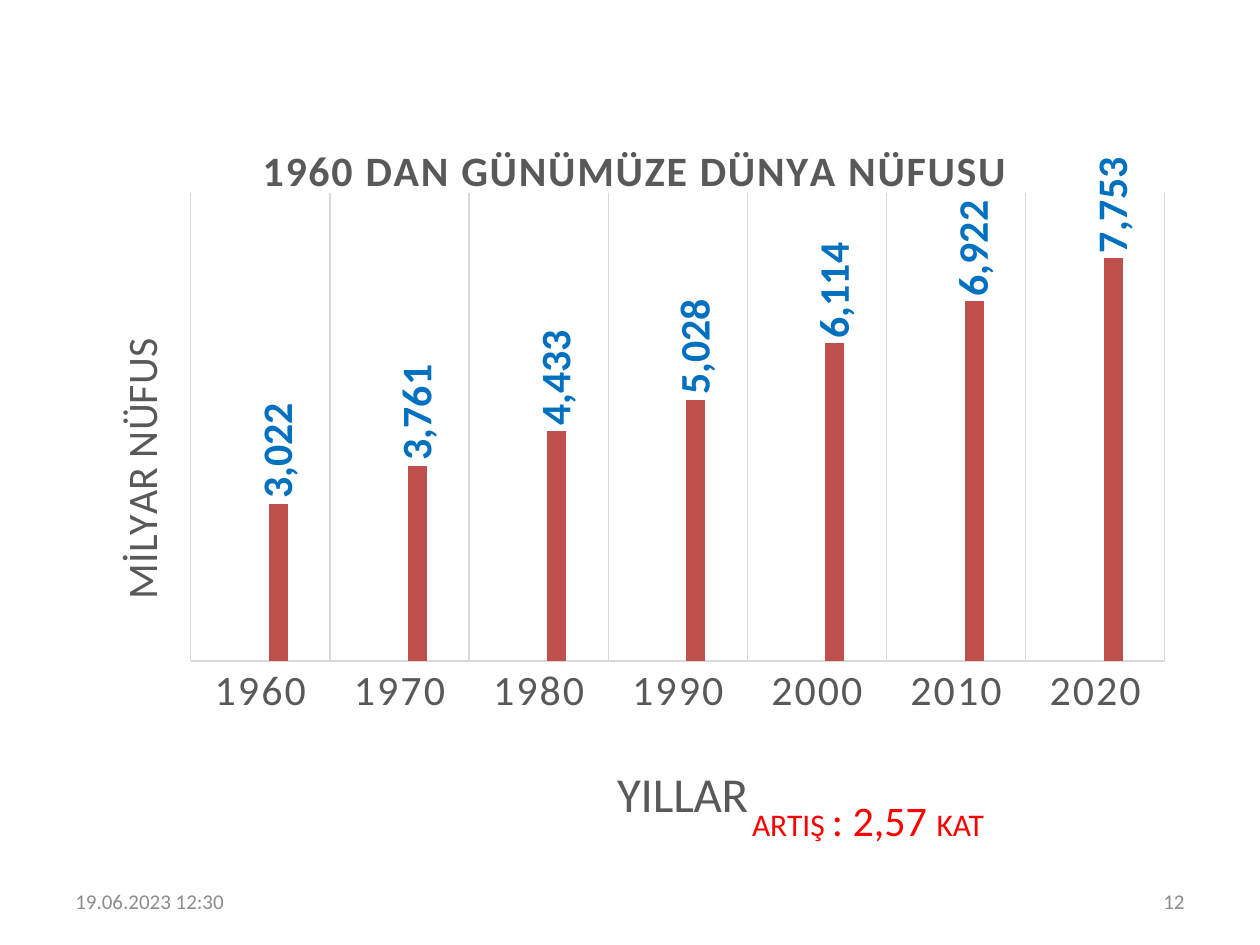
from lxml.etree import SubElement
from pptx import Presentation
from pptx.chart.data import CategoryChartData
from pptx.dml.color import RGBColor
from pptx.enum.chart import XL_CHART_TYPE, XL_LABEL_POSITION, XL_TICK_LABEL_POSITION, XL_TICK_MARK
from pptx.enum.text import MSO_ANCHOR, PP_ALIGN
from pptx.oxml.ns import qn
from pptx.util import Inches, Pt

# Content
YEARS = ["1960", "1970", "1980", "1990", "2000", "2010", "2020"]
SERIES = [
    ("Series 1", [None] * len(YEARS), "4F81BD"),
    ("Series 2", [3022, 3761, 4433, 5028, 6114, 6922, 7753], "C0504D"),
]
CHART_TITLE, X_TITLE, Y_TITLE = "1960 DAN GÜNÜMÜZE DÜNYA NÜFUSU", "YILLAR", "MİLYAR NÜFUS"
GROWTH = [("ARTIŞ ", 18), (": 2,57 ", 24), ("KAT", 18)]
DATE, NUMBER = [("19.06.2023 12:30", 12)], [("12", 12)]

FONT = "Calibri"
TEXT, GRID, LABEL, RED, FOOTER = "595959", "D9D9D9", "0070C0", "FF0000", "8C8C8C"
MARGIN, FOOT_TOP, FOOT_W, FOOT_H = 0.5, 6.95, 2.33, 0.4


def rgb(color):
    return RGBColor.from_string(color)


def style(font, size, color, bold=False):
    font.name, font.size, font.bold = FONT, Pt(size), bold
    font.color.rgb = rgb(color)


def place(parent, index, **shares):
    """Set a manual layout, in shares of the chart's size."""
    for old in parent.findall(qn("c:layout")):
        parent.remove(old)
    layout = SubElement(parent, qn("c:layout"))
    parent.insert(index, layout)
    manual = SubElement(layout, qn("c:manualLayout"))
    if "w" in shares:
        SubElement(manual, qn("c:layoutTarget")).set("val", "inner")
    for mode in ("xMode", "yMode"):
        SubElement(manual, qn(f"c:{mode}")).set("val", "edge")
    for key, share in shares.items():
        SubElement(manual, qn(f"c:{key}")).set("val", str(share))


def set_title(title, text, size, x, y, bold=False, spacing=0):
    tf = title.text_frame
    tf.text = text
    r = tf.paragraphs[0].runs[0]
    style(r.font, size, TEXT, bold)
    r.font._element.set("spc", str(spacing))
    place(title._element, 1, x=x, y=y)
    return tf


def turn_up(body):
    body.set("rot", "-5400000")
    body.set("vert", "horz")


def add_text(s, box, runs, color, align=PP_ALIGN.LEFT, anchor=MSO_ANCHOR.TOP):
    tf = s.shapes.add_textbox(*map(Inches, box)).text_frame
    tf.word_wrap = True
    tf.vertical_anchor = anchor
    p = tf.paragraphs[0]
    p.alignment = align
    for text, size in runs:
        r = p.add_run()
        r.text = text
        style(r.font, size, color)


prs = Presentation()
prs.slide_width, prs.slide_height = Inches(10), Inches(7.5)
s = prs.slides.add_slide(prs.slide_layouts[6])

# Population chart
data = CategoryChartData(number_format="#,##0")
data.categories = YEARS
for name, values, _ in SERIES:
    data.add_series(name, values)
chart = s.shapes.add_chart(XL_CHART_TYPE.COLUMN_CLUSTERED, Inches(0.75), Inches(0.84),
                           Inches(8.5), Inches(5.83), data).chart
style(chart.font, 10, "000000")
chart.has_legend = False
place(chart._chartSpace.chart.plotArea, 0, x=0.09, y=0.12, w=0.91, h=0.64)
chart.has_title = True
set_title(chart.chart_title, CHART_TITLE, 24, 0.15, 0.04, bold=True, spacing=100)

# Columns and their upright labels
plot = chart.plots[0]
plot.gap_width, plot.overlap, plot.vary_by_categories = 444, -90, False
for ser, (_, _, color) in zip(plot.series, SERIES):
    ser.format.fill.solid()
    ser.format.fill.fore_color.rgb = rgb(color)
    labels = ser.data_labels
    labels.show_value = True
    labels.position = XL_LABEL_POSITION.OUTSIDE_END
    style(labels.font, 24, LABEL, bold=True)
    turn_up(labels._element.find(qn("c:txPr")).find(qn("a:bodyPr")))

# Axes
years = chart.category_axis
years.major_tick_mark = XL_TICK_MARK.NONE
years.has_major_gridlines = True
for line in (years.format.line, years.major_gridlines.format.line):
    line.color.rgb = rgb(GRID)
    line.width = Pt(0.75)
style(years.tick_labels.font, 24, TEXT)
years.tick_labels.font._element.set("spc", "120")
set_title(years.axis_title, X_TITLE, 28, 0.48, 0.885)

people = chart.value_axis
people.minimum_scale, people.maximum_scale = 0, 9000
people.has_major_gridlines = False
people.major_tick_mark = XL_TICK_MARK.NONE
people.tick_label_position = XL_TICK_LABEL_POSITION.NONE
people.format.line.fill.background()
tf = set_title(people.axis_title, Y_TITLE, 24, 0.01, 0.31)
turn_up(tf._txBody.find(qn("a:bodyPr")))

# Growth note and footer
add_text(s, (5.87, 6.26, 2.28, 0.5), GROWTH, RED)
add_text(s, (MARGIN, FOOT_TOP, FOOT_W, FOOT_H), DATE, FOOTER, anchor=MSO_ANCHOR.MIDDLE)
add_text(s, (10 - MARGIN - FOOT_W, FOOT_TOP, FOOT_W, FOOT_H), NUMBER, FOOTER,
         PP_ALIGN.RIGHT, MSO_ANCHOR.MIDDLE)

prs.save("out.pptx")
